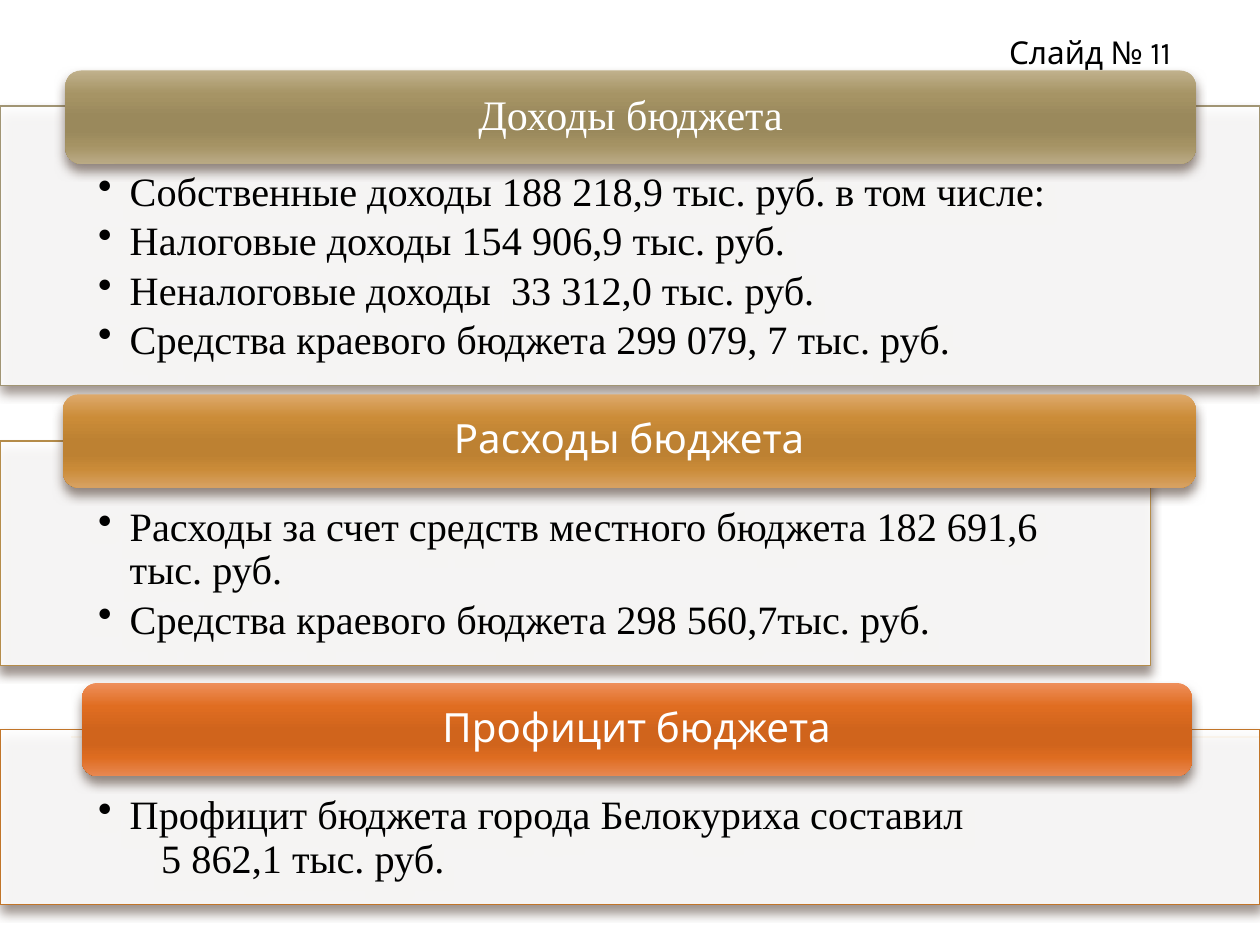
from lxml.etree import SubElement
from pptx import Presentation
from pptx.dml.color import RGBColor
from pptx.enum.shapes import MSO_CONNECTOR, MSO_SHAPE
from pptx.enum.text import MSO_ANCHOR, MSO_AUTO_SIZE, PP_ALIGN
from pptx.oxml.ns import qn
from pptx.util import Inches, Pt

WHITE = RGBColor(0xFF, 0xFF, 0xFF)
BLACK = RGBColor(0x00, 0x00, 0x00)
AMBER = RGBColor(0xF0, 0xA2, 0x2E)
SHADOW = RGBColor(0x4E, 0x3B, 0x30)
OLIVE = RGBColor(0xA1, 0x95, 0x74)
OCHRE = RGBColor(0xB5, 0x8C, 0x4A)
RUST = RGBColor(0xC1, 0x75, 0x29)
STOPS = (0, 25, 50, 65, 80, 100)
OLIVE_GRADIENT = [RGBColor.from_string(c) for c in "C0B18C A69465 9A895C 9A895C A59364 BAAA85".split()]
OCHRE_GRADIENT = [RGBColor.from_string(c) for c in "DEA96B CB8C38 BD8132 BD8132 CA8B38 D8A263".split()]
RUST_GRADIENT = [RGBColor.from_string(c) for c in "EE8F5B E06D21 D0641C D0641C DE6C20 E88852".split()]
SERIF = "Times New Roman"
SANS = "Karla"


class BudgetSlide:
    body_size = 23
    header_height = 0.74

    def __init__(self, prs):
        self.s = prs.slides.add_slide(prs.slide_layouts[6])

    def color(self, parent, rgb, alpha=None):
        clr = SubElement(parent, qn("a:srgbClr"), val=str(rgb))
        if alpha is not None:
            SubElement(clr, qn("a:alpha"), val=str(alpha * 1000))

    def run(self, p, text, size, font, rgb):
        r = p.add_run()
        r.text = text
        r.font.size = Pt(size)
        r.font.name = font
        r.font.color.rgb = rgb

    def shape(self, kind, left, top, width, height, insets):
        sp = self.s.shapes.add_shape(kind, Inches(left), Inches(top), Inches(width), Inches(height))
        sp.shadow.inherit = False
        effects = sp._element.spPr.find(qn("a:effectLst"))
        shadow = SubElement(effects, qn("a:outerShdw"), blurRad=str(Pt(6)), dist=str(Pt(4)),
                            dir="5400000", rotWithShape="0")
        self.color(shadow, SHADOW, 60)
        tf = sp.text_frame
        tf.word_wrap = True
        tf.margin_left, tf.margin_top, tf.margin_right, tf.margin_bottom = map(Inches, insets)
        return sp

    def body(self, top, width, height, outline, items):
        sp = self.shape(MSO_SHAPE.RECTANGLE, 0, top, width, height, (0.78, 0.52, 0.78, 0.18))
        sp.fill.solid()
        sp.fill.fore_color.rgb = WHITE
        clr = sp._element.spPr.find(qn("a:solidFill")).find(qn("a:srgbClr"))
        SubElement(clr, qn("a:alpha"), val="90000")
        sp.line.color.rgb = outline
        sp.line.width = Pt(0.79)
        tf = sp.text_frame
        tf.vertical_anchor = MSO_ANCHOR.TOP
        for i, (text, bulleted, space) in enumerate(items):
            p = tf.paragraphs[0] if i == 0 else tf.add_paragraph()
            p.alignment = PP_ALIGN.LEFT
            p.line_spacing = 0.9
            p.space_after = Pt(space)
            pPr = p._p.get_or_add_pPr()
            pPr.set("marL", str(Inches(0.25 if bulleted else 0.5)))
            pPr.set("indent", str(Inches(-0.25 if bulleted else 0)))
            if bulleted:
                SubElement(pPr, qn("a:buChar"), char="•")
            self.run(p, text, self.body_size, SERIF, BLACK)

    def header(self, left, top, width, gradient, text, size, font):
        sp = self.shape(MSO_SHAPE.ROUNDED_RECTANGLE, left, top, width, self.header_height,
                        (0.26, 0, 0.26, 0))
        sp.fill.gradient()
        sp.fill.gradient_angle = 270
        stops = sp._element.spPr.find(qn("a:gradFill")).find(qn("a:gsLst"))
        for stop in list(stops):
            stops.remove(stop)
        for pos, rgb in zip(STOPS, gradient):
            self.color(SubElement(stops, qn("a:gs"), pos=str(pos * 1000)), rgb)
        sp.line.fill.background()
        tf = sp.text_frame
        tf.vertical_anchor = MSO_ANCHOR.MIDDLE
        p = tf.paragraphs[0]
        p.alignment = PP_ALIGN.CENTER
        p.line_spacing = 0.9
        self.run(p, text, size, font, WHITE)

    def rule(self, left, right, y):
        line = self.s.shapes.add_connector(MSO_CONNECTOR.STRAIGHT, Inches(left), Inches(y),
                                           Inches(right), Inches(y))
        line.line.color.rgb = AMBER
        line.line.width = Pt(0.75)
        SubElement(line._element.spPr, qn("a:effectLst"))

    def label(self, left, top, width, height, text):
        sp = self.s.shapes.add_textbox(Inches(left), Inches(top), Inches(width), Inches(height))
        tf = sp.text_frame
        tf.word_wrap = False
        tf.auto_size = MSO_AUTO_SIZE.SHAPE_TO_FIT_TEXT
        self.run(tf.paragraphs[0], text, 18, SANS, BLACK)


def main():
    prs = Presentation()
    prs.slide_width = Inches(10)
    prs.slide_height = Inches(7.5)
    slide = BudgetSlide(prs)
    slide.rule(0.56, 10, 5.85)
    slide.body(0.84, 10, 2.22, OLIVE, [
        ("Собственные доходы 188 218,9 тыс. руб. в том числе:", True, 3.5),
        ("Налоговые доходы 154 906,9 тыс. руб.", True, 3.5),
        ("Неналоговые доходы  33 312,0 тыс. руб.", True, 3.5),
        ("Средства краевого бюджета 299 079, 7 тыс. руб.", True, 3.5),
    ])
    slide.header(0.52, 0.56, 8.97, OLIVE_GRADIENT, "Доходы бюджета", 24, SERIF)
    slide.body(3.5, 9.13, 1.78, OCHRE, [
        ("Расходы за счет средств местного бюджета 182 691,6 тыс. руб.", True, 3.5),
        ("Средства краевого бюджета 298 560,7тыс. руб.", True, 3.5),
    ])
    slide.header(0.5, 3.13, 8.99, OCHRE_GRADIENT, "Расходы бюджета", 23, SANS)
    slide.body(5.79, 10, 1.39, RUST, [
        ("Профицит бюджета города Белокуриха составил", True, 0),
        ("5 862,1 тыс. руб.", False, 3.5),
    ])
    slide.header(0.65, 5.42, 8.81, RUST_GRADIENT, "Профицит бюджета", 23, SANS)
    slide.label(7.91, 0.21, 1.69, 0.4, "Слайд № 11")
    prs.save("out.pptx")


if __name__ == "__main__":
    main()
